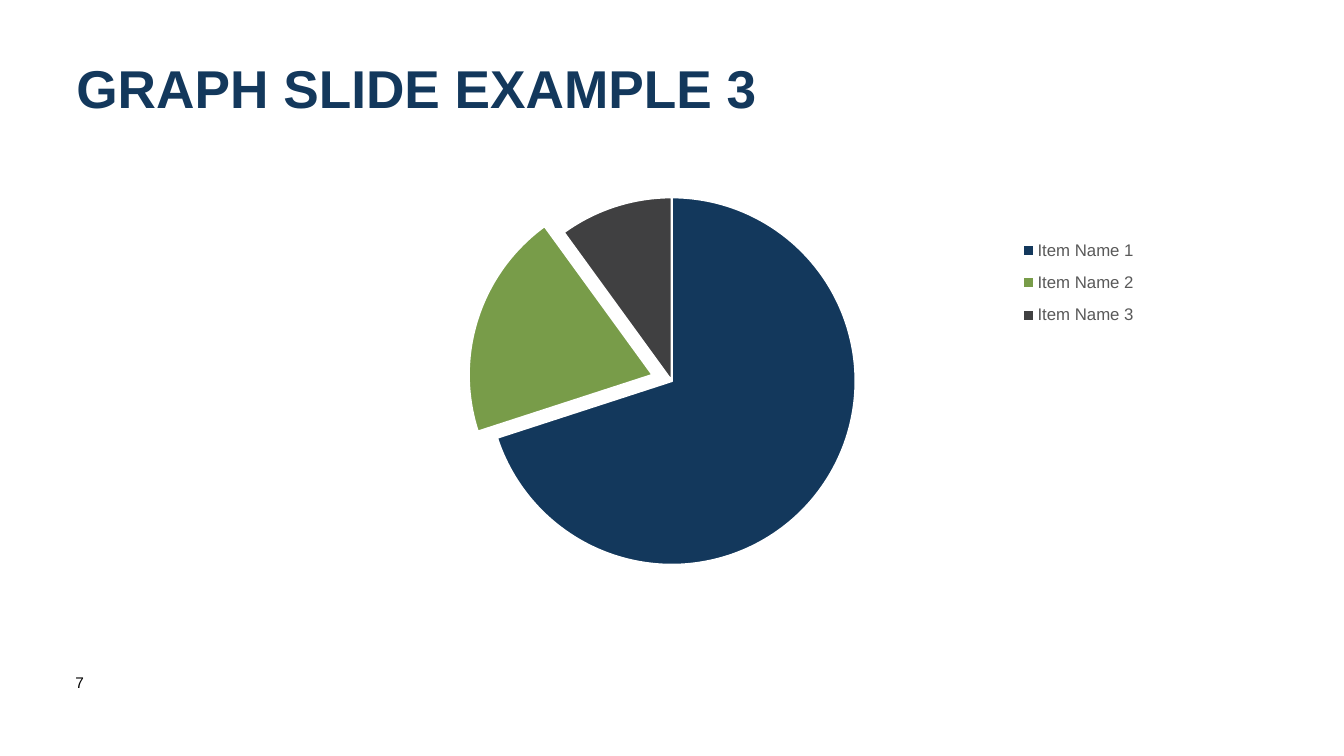
from lxml.etree import SubElement
from pptx import Presentation
from pptx.chart.data import CategoryChartData as ChartData
from pptx.dml.color import RGBColor as Rgb
from pptx.enum.chart import XL_CHART_TYPE as ChartType, XL_LEGEND_POSITION as LegendPosition
from pptx.enum.text import MSO_ANCHOR as Anchor
from pptx.oxml import parse_xml
from pptx.oxml.ns import nsdecls, qn
from pptx.util import Pt

# Content
COLOURS = {"navy": "13385C", "green": "789C49", "charcoal": "404041",
           "grey": "595959", "black": "000000", "white": "FFFFFF"}
FONT = "Arial"
SLIDE_SIZE = (960, 540)
TEXTS = [
    {"text": "GRAPH SLIDE EXAMPLE 3", "at": (47.5, 33, 828, 58.5), "anchor": Anchor.MIDDLE,
     "font": {"size": Pt(38), "bold": True}, "colour": "navy"},
    {"text": "7", "at": (46.8, 477.4, 41.8, 38.9), "anchor": Anchor.TOP,
     "font": {"size": Pt(11), "bold": False}, "colour": "black"},
]
# name, value, colour, explosion in percent
SLICES = [("Item Name 1", 70, "navy", 0),
          ("Item Name 2", 20, "green", 11),
          ("Item Name 3", 10, "charcoal", 0)]
CHART_AT = (46.1, 131.8, 867.6, 305.3)
# shares of the chart's width and height
PLOT_LAYOUT = {"x": 0.2, "y": 0.03, "w": 0.6, "h": 0.86}
LEGEND_LAYOUT = {"x": 0.78, "y": 0.1, "w": 0.11, "h": 0.26}


def colour_of(name):
    return Rgb.from_string(COLOURS[name])


def style_font(font, colour, **values):
    font.name = FONT
    font.color.rgb = colour_of(colour)
    for name, value in values.items():
        setattr(font, name, value)


def add_text(page, item):
    box = page.shapes.add_textbox(*map(Pt, item["at"]))
    frame = box.text_frame
    frame.word_wrap = True
    frame.vertical_anchor = item["anchor"]
    span = frame.paragraphs[0].add_run()
    span.text = item["text"]
    style_font(span.font, item["colour"], **item["font"])


def place(parent, index, shares):
    """Give a chart part a manual layout."""
    for old in parent.findall(qn("c:layout")):
        parent.remove(old)
    layout = parse_xml(f"<c:layout {nsdecls('c')}/>")
    manual = SubElement(layout, qn("c:manualLayout"))
    if parent.tag == qn("c:plotArea"):
        SubElement(manual, qn("c:layoutTarget"), val="inner")
    for axis in "xy":
        SubElement(manual, qn(f"c:{axis}Mode"), val="edge")
    for name, share in shares.items():
        SubElement(manual, qn(f"c:{name}"), val=str(share))
    parent.insert(index, layout)


def add_pie(page):
    data = ChartData()
    data.categories = [name for name, *_ in SLICES]
    data.add_series("Series 1", [value for _, value, *_ in SLICES])
    chart = page.shapes.add_chart(ChartType.PIE, *map(Pt, CHART_AT), data).chart
    chart.has_title = False
    style_font(chart.font, "black", size=Pt(10))

    # Slices
    plot = chart.plots[0]
    plot.vary_by_categories = True
    series = plot.series[0]
    for index, (_, _, colour, explosion) in enumerate(SLICES):
        look = series.points[index].format
        look.fill.solid()
        look.fill.fore_color.rgb = colour_of(colour)
        look.line.color.rgb = colour_of("white")
        look.line.width = Pt(1.5)
        if explosion:
            point = series._element.findall(qn("c:dPt"))[index]
            offset = parse_xml(f'<c:explosion {nsdecls("c")} val="{explosion}"/>')
            point.find(qn("c:spPr")).addprevious(offset)

    # Legend
    chart.has_legend = True
    legend = chart.legend
    legend.position = LegendPosition.BOTTOM
    legend.include_in_layout = False
    style_font(legend.font, "grey", size=Pt(12))
    place(legend._element, 1, LEGEND_LAYOUT)
    place(plot._element.getparent(), 0, PLOT_LAYOUT)


def main():
    deck = Presentation()
    deck.slide_width, deck.slide_height = map(Pt, SLIDE_SIZE)
    page = deck.slides.add_slide(deck.slide_layouts[6])
    add_pie(page)
    for item in TEXTS:
        add_text(page, item)
    deck.save("out.pptx")


if __name__ == "__main__":
    main()
